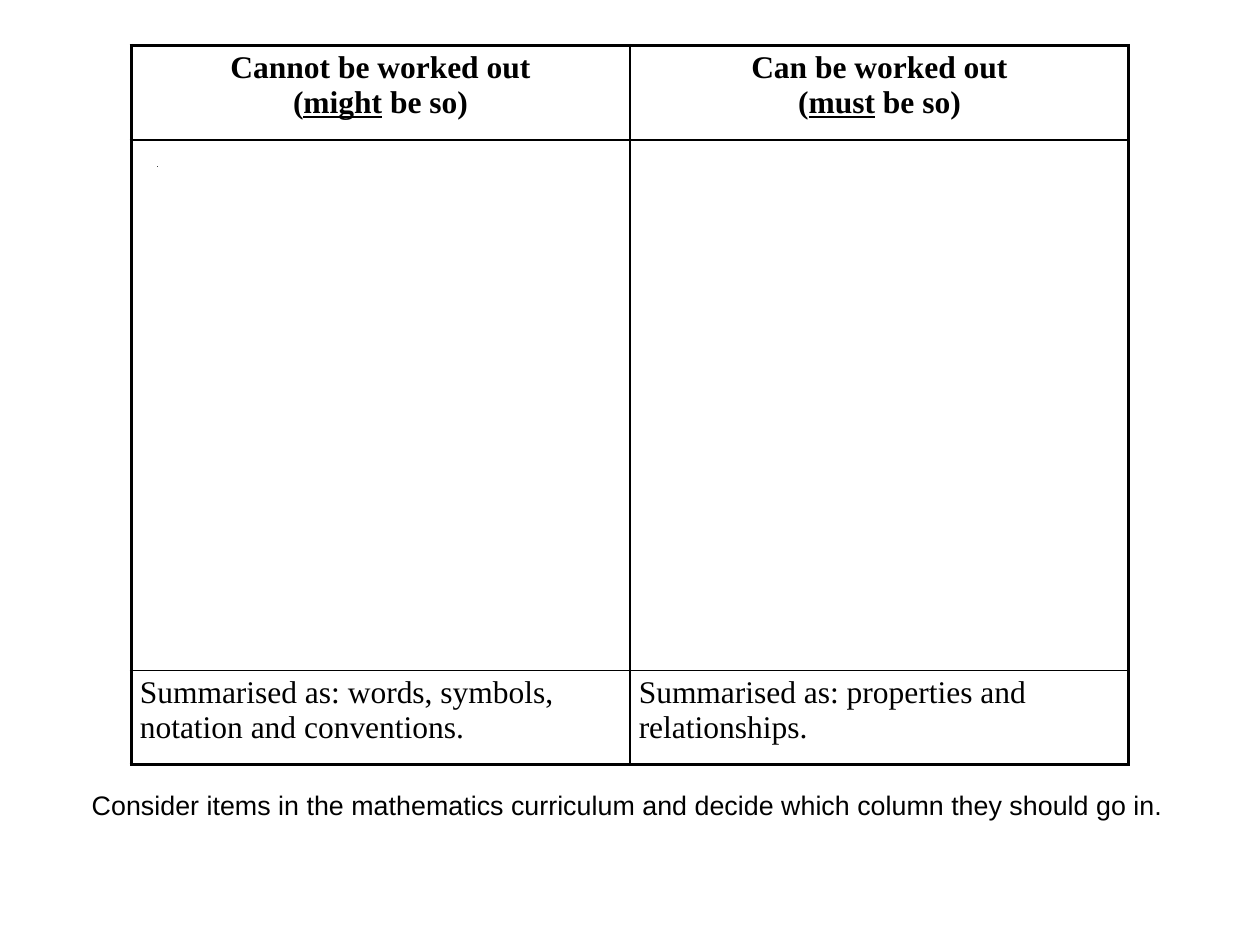
import pptx
import pptx.util
import pptx.dml.color
import pptx.enum.shapes
import pptx.enum.text
import pptx.oxml.ns
from dataclasses import dataclass
from lxml import etree

Inches = pptx.util.Inches
Pt = pptx.util.Pt


@dataclass(frozen=True)
class Theme:
    ink: str = "000000"
    dot: str = "4F81BD"
    serif: str = "Times New Roman"
    sans: str = "Arial"
    cell: float = 18
    note: float = 15.3
    thick: float = 2
    thin: float = 1


THEME = Theme()
HEADS = [("Cannot be worked out", "might"), ("Can be worked out", "must")]
SUMS = ["words, symbols, notation and conventions.", "properties and relationships."]
ROWS = [0.75, 4.21, 0.75]


def color(hex):
    return pptx.dml.color.RGBColor.from_string(hex)


def style(para, face, size, bold=False):
    font = para.font
    font.name, font.size, font.bold = face, Pt(size), bold
    font.color.rgb = color(THEME.ink)


def border(cell, row, col):
    outer = {"lnL": col == 0, "lnR": col == 1, "lnT": row == 0, "lnB": row == 2}
    props = cell._tc.get_or_add_tcPr()
    for at, (tag, edge) in enumerate(outer.items()):
        line = etree.Element(pptx.oxml.ns.qn("a:" + tag))
        line.set("w", str(Pt(THEME.thick if edge else THEME.thin)))
        fill = etree.SubElement(line, pptx.oxml.ns.qn("a:solidFill"))
        etree.SubElement(fill, pptx.oxml.ns.qn("a:srgbClr"), val=THEME.ink)
        props.insert(at, line)


def head(cell, title, verb):
    frame = cell.text_frame
    frame.text = title
    para = frame.add_paragraph()
    for text in ("(", verb, " be so)"):
        run = para.add_run()
        run.text = text
        if text == verb:
            run.font.underline = True
    for para in frame.paragraphs:
        para.alignment = pptx.enum.text.PP_ALIGN.CENTER
        style(para, THEME.serif, THEME.cell, True)


def grid(slide):
    table = slide.shapes.add_table(
        3, 2, Inches(1.04), Inches(0.36), Inches(7.92), Inches(sum(ROWS))).table
    table.first_row = table.horz_banding = False
    for row, high in enumerate(ROWS):
        table.rows[row].height = Inches(high)
        for col in range(2):
            cell = table.cell(row, col)
            cell.margin_left = cell.margin_right = Inches(0.07)
            cell.margin_top = cell.margin_bottom = Inches(0.04)
            cell.fill.background()
            border(cell, row, col)
    for col in range(2):
        head(table.cell(0, col), *HEADS[col])
        cell = table.cell(2, col)
        cell.text = "Summarised as: " + SUMS[col]
        style(cell.text_frame.paragraphs[0], THEME.serif, THEME.cell)


def dot(slide):
    shape = slide.shapes.add_shape(
        pptx.enum.shapes.MSO_SHAPE.RECTANGLE, Inches(1.25), Inches(1.32), 0, 0)
    shape.shadow.inherit = False
    shape.fill.solid()
    shape.fill.fore_color.rgb = color(THEME.dot)
    shape.line.color.rgb = color(THEME.ink)
    shape.line.width = Pt(0.75)


def note(slide, text):
    box = slide.shapes.add_textbox(Inches(0.63), Inches(6.19), Inches(8.74), Inches(0.39))
    frame = box.text_frame
    frame.word_wrap = True
    frame.vertical_anchor = pptx.enum.text.MSO_ANCHOR.MIDDLE
    frame.text = text
    style(frame.paragraphs[0], THEME.sans, THEME.note)


def main():
    deck = pptx.Presentation()
    deck.slide_width, deck.slide_height = Inches(10), Inches(7.5)
    slide = deck.slides.add_slide(deck.slide_layouts[6])
    dot(slide)
    grid(slide)
    note(slide, "Consider items in the mathematics curriculum "
                "and decide which column they should go in.")
    deck.save("out.pptx")


if __name__ == "__main__":
    main()
